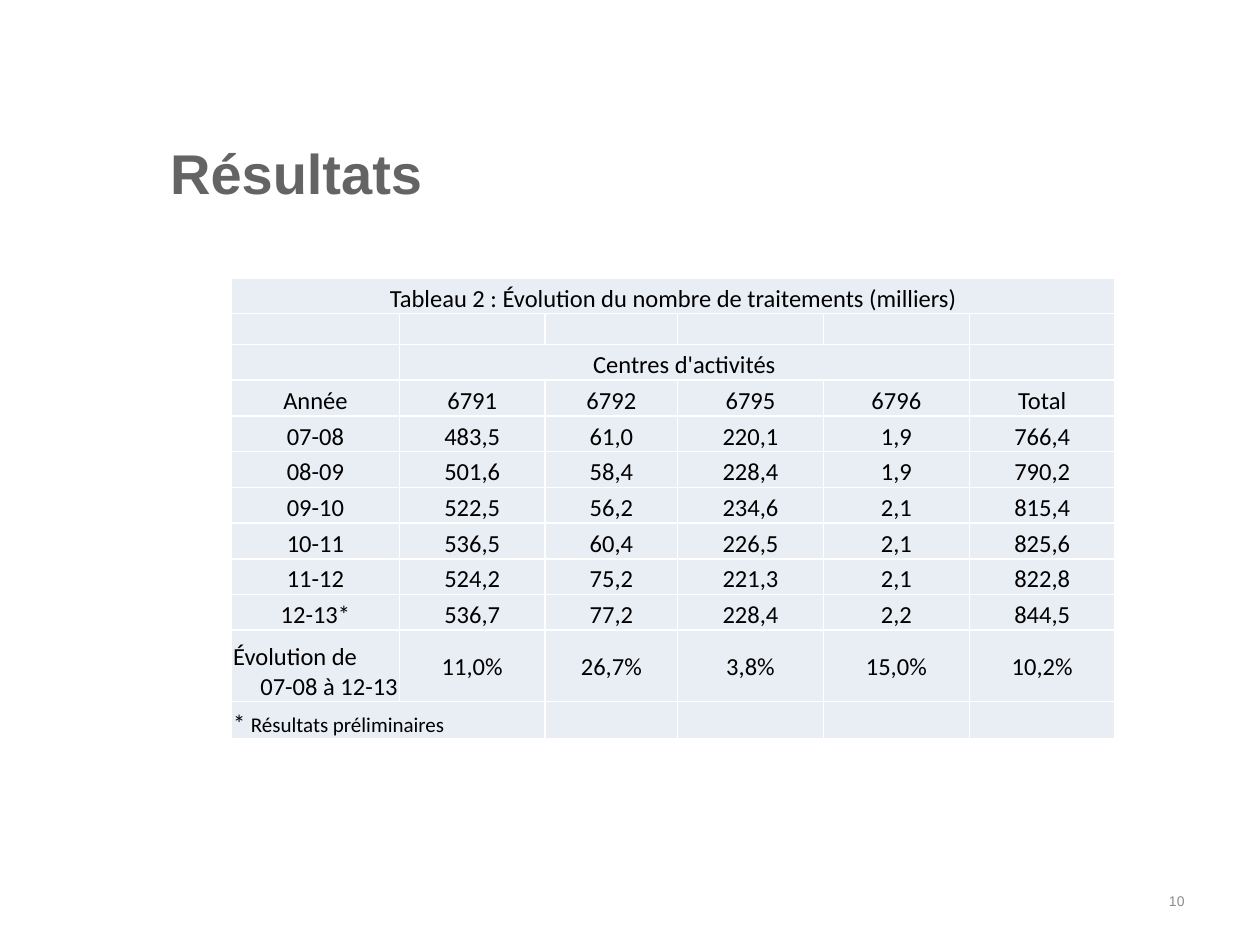
import dataclasses

import lxml.etree
import pptx
import pptx.dml.color
import pptx.enum.text
import pptx.oxml.ns
import pptx.util

Cm, Pt = pptx.util.Cm, pptx.util.Pt
ALIGN = pptx.enum.text.PP_ALIGN
ANCHOR = pptx.enum.text.MSO_ANCHOR
qn = pptx.oxml.ns.qn


@dataclasses.dataclass(frozen=True)
class Theme:
    heading_font: str = "Arial"
    table_font: str = "Calibri"
    title: str = "646464"
    page: str = "8C8C8C"
    ink: str = "000000"
    cell: str = "E9EDF4"
    border: str = "FFFFFF"
    title_size: int = 32
    page_size: int = 8
    table_size: int = 14
    note_size: int = 12


THEME = Theme()

# Table content: every row has six columns
CAPTION = "Tableau 2 : Évolution du nombre de traitements (milliers)"
RESULTS = [
    [CAPTION] + [""] * 5,
    [""] * 6,
    ["", "Centres d'activités", "", "", "", ""],
    ["Année", "6791", "6792", "6795", "6796", "Total"],
    ["07-08", "483,5", "61,0", "220,1", "1,9", "766,4"],
    ["08-09", "501,6", "58,4", "228,4", "1,9", "790,2"],
    ["09-10", "522,5", "56,2", "234,6", "2,1", "815,4"],
    ["10-11", "536,5", "60,4", "226,5", "2,1", "825,6"],
    ["11-12", "524,2", "75,2", "221,3", "2,1", "822,8"],
    ["12-13*", "536,7", "77,2", "228,4", "2,2", "844,5"],
    ["", "11,0%", "26,7%", "3,8%", "15,0%", "10,2%"],
    [""] * 6,
]
CAPTION_ROW, CENTRES_ROW, EVOLUTION_ROW, NOTE_ROW = 0, 2, 10, 11
COLUMN_WIDTHS = [3.38, 2.94, 2.67, 2.94, 2.94, 2.94]
ROW_HEIGHTS = [0.72, 0.53] + [0.72] * 8 + [1.44, 0.75]


def rgb(value):
    return pptx.dml.color.RGBColor.from_string(value)


def add_run(paragraph, text, font, size, color, bold=False):
    run = paragraph.add_run()
    run.text = text
    run.font.name = font
    run.font.size = Pt(size)
    run.font.bold = bold
    run.font.color.rgb = rgb(color)


def add_label(slide, box, text, size, color, align, bold=False, spacing=1.0):
    frame = slide.shapes.add_textbox(*map(Cm, box)).text_frame
    frame.word_wrap = True
    frame.vertical_anchor = ANCHOR.MIDDLE
    paragraph = frame.paragraphs[0]
    paragraph.alignment = align
    paragraph.line_spacing = spacing
    add_run(paragraph, text, THEME.heading_font, size, color, bold)


def add_cell_text(paragraph, text, align, size=THEME.table_size):
    paragraph.alignment = align
    add_run(paragraph, text, THEME.table_font, size, THEME.ink)


def add_borders(cell):
    properties = cell._tc.get_or_add_tcPr()
    for position, side in enumerate(("a:lnL", "a:lnR", "a:lnT", "a:lnB")):
        line = lxml.etree.Element(qn(side), w=str(Pt(1)))
        fill = lxml.etree.SubElement(line, qn("a:solidFill"))
        lxml.etree.SubElement(fill, qn("a:srgbClr"), val=THEME.border)
        properties.insert(position, line)


def size_empty_paragraph(paragraph):
    # Keeps rows without text as low as the 14-point rows
    end = lxml.etree.SubElement(paragraph._p, qn("a:endParaRPr"),
                                sz=str(THEME.table_size * 100))
    lxml.etree.SubElement(end, qn("a:latin"), typeface=THEME.table_font)


def style_cell(cell, anchor):
    cell.fill.solid()
    cell.fill.fore_color.rgb = rgb(THEME.cell)
    cell.vertical_anchor = anchor
    cell.margin_left = cell.margin_right = cell.margin_top = Cm(0.03)
    cell.margin_bottom = 0
    add_borders(cell)


def add_results_table(slide):
    table = slide.shapes.add_table(
        len(RESULTS), len(COLUMN_WIDTHS), Cm(4.67), Cm(5.6),
        Cm(sum(COLUMN_WIDTHS)), Cm(sum(ROW_HEIGHTS))).table
    table.first_row = table.horz_banding = False
    for column, width in zip(table.columns, COLUMN_WIDTHS):
        column.width = Cm(width)
    for row, height in zip(table.rows, ROW_HEIGHTS):
        row.height = Cm(height)

    # Regular cells
    for r, values in enumerate(RESULTS):
        for c, value in enumerate(values):
            cell = table.cell(r, c)
            percentage = r == EVOLUTION_ROW and c > 0
            style_cell(cell, ANCHOR.MIDDLE if percentage else ANCHOR.BOTTOM)
            paragraph = cell.text_frame.paragraphs[0]
            if value:
                add_cell_text(paragraph, value, ALIGN.CENTER)
            elif (r, c) not in ((EVOLUTION_ROW, 0), (NOTE_ROW, 0)):
                size_empty_paragraph(paragraph)

    # Two-line row heading and footnote
    evolution = table.cell(EVOLUTION_ROW, 0).text_frame
    add_cell_text(evolution.paragraphs[0], "Évolution de", ALIGN.LEFT)
    add_cell_text(evolution.add_paragraph(), "07-08 à 12-13", ALIGN.RIGHT)
    note = table.cell(NOTE_ROW, 0).text_frame.paragraphs[0]
    add_cell_text(note, "* ", ALIGN.LEFT)
    add_cell_text(note, "Résultats préliminaires", ALIGN.LEFT, THEME.note_size)

    # Merged cells
    for r, first, last in ((CAPTION_ROW, 0, 5), (CENTRES_ROW, 1, 4), (NOTE_ROW, 0, 1)):
        table.cell(r, first).merge(table.cell(r, last))


def main():
    presentation = pptx.Presentation()
    presentation.slide_width, presentation.slide_height = Cm(25.4), Cm(19.05)
    slide = presentation.slides.add_slide(presentation.slide_layouts[6])

    add_label(slide, (3.18, 2.51, 20.96, 2.18), "Résultats", THEME.title_size,
              THEME.title, ALIGN.LEFT, bold=True, spacing=0.8)
    add_results_table(slide)
    add_label(slide, (18.21, 17.65, 5.92, 1.02), "10", THEME.page_size,
              THEME.page, ALIGN.RIGHT)

    presentation.save("out.pptx")


if __name__ == "__main__":
    main()
